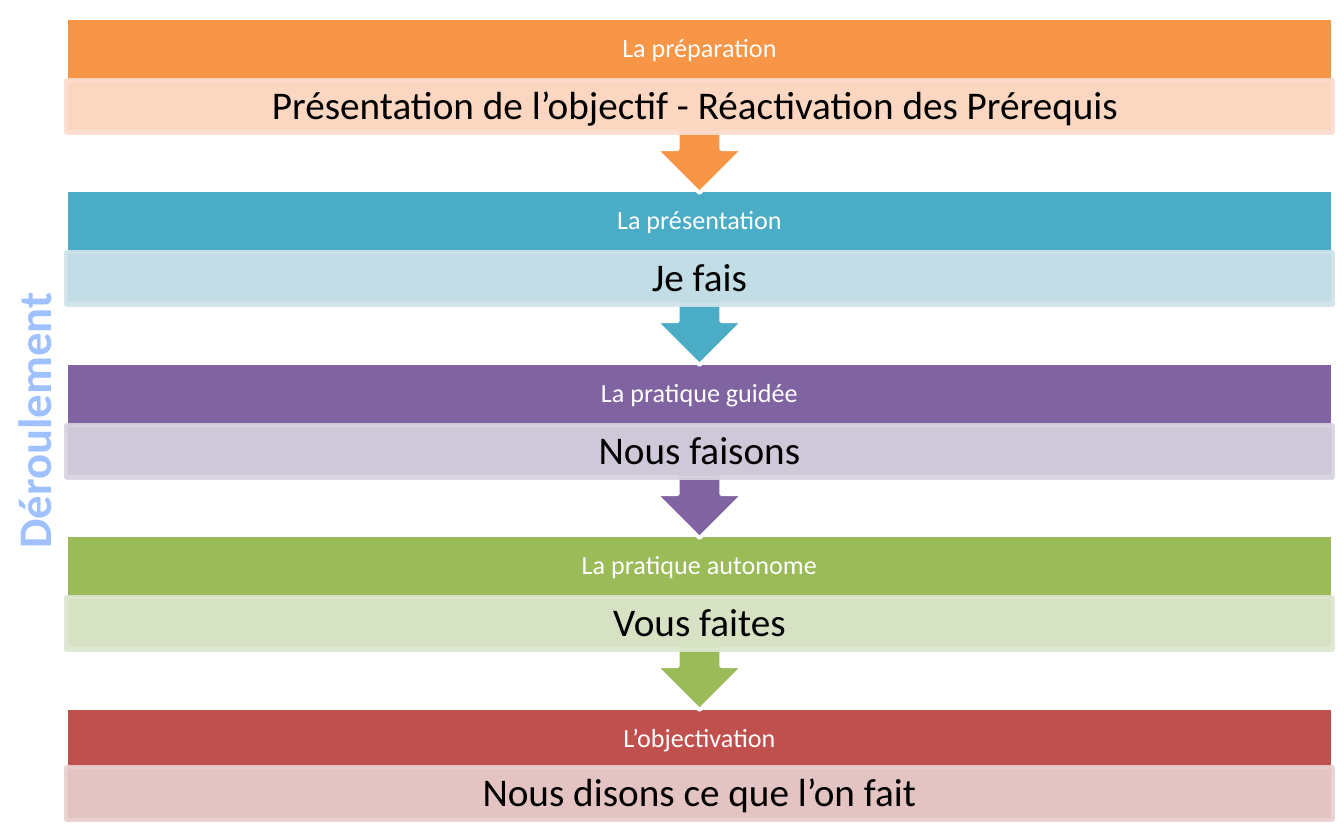
from dataclasses import dataclass

from lxml import etree
from pptx import Presentation
from pptx.dml.color import RGBColor
from pptx.enum.shapes import MSO_SHAPE
from pptx.enum.text import MSO_ANCHOR, MSO_AUTO_SIZE, PP_ALIGN
from pptx.oxml.ns import qn
from pptx.util import Emu, Pt

RECTANGLE = MSO_SHAPE.RECTANGLE
CALLOUT = MSO_SHAPE.UP_ARROW_CALLOUT
CENTER = PP_ALIGN.CENTER
TOP, MIDDLE = MSO_ANCHOR.TOP, MSO_ANCHOR.MIDDLE
NO_AUTOFIT = MSO_AUTO_SIZE.NONE

WHITE = RGBColor(0xFF, 0xFF, 0xFF)
BLACK = RGBColor(0x00, 0x00, 0x00)
TITLE_BLUE = RGBColor(0xA0, 0xC1, 0xFF)
ORANGE, PEACH = RGBColor(0xF7, 0x96, 0x46), RGBColor(0xFC, 0xDD, 0xCF)
TEAL, PALE_TEAL = RGBColor(0x4B, 0xAC, 0xC6), RGBColor(0xD0, 0xE3, 0xEA)
PURPLE, LILAC = RGBColor(0x80, 0x64, 0xA2), RGBColor(0xD8, 0xD3, 0xE0)
GREEN, PALE_GREEN = RGBColor(0x9B, 0xBB, 0x59), RGBColor(0xDE, 0xE7, 0xD1)
RED, PINK = RGBColor(0xC0, 0x50, 0x4D), RGBColor(0xE8, 0xD0, 0xD0)

FONT = "Calibri"
EMU_PER_PX = 914400 / 134.4
PAGE_WIDTH, PAGE_HEIGHT = 1344, 840
STEP_LEFT, STEP_WIDTH, FIRST_TOP = 66, 1267, 18
FIVE_STEPS_SPAN = 690  # from the first top to the fifth
CALLOUT_HEIGHT, LAST_HEIGHT = 175, 113
HEADER_HEIGHT, STRIP_HEIGHT = 62, 53
STRIP_OFFSET, LAST_STRIP_OFFSET = 62, 59


@dataclass(frozen=True)
class Step:
    header: str
    detail: str
    color: RGBColor
    tint: RGBColor


STEPS = [
    Step("La préparation", "Présentation de l’objectif - Réactivation des Prérequis ",
         ORANGE, PEACH),
    Step("La présentation", "Je fais", TEAL, PALE_TEAL),
    Step("La pratique guidée", "Nous faisons", PURPLE, LILAC),
    Step("La pratique autonome", "Vous faites", GREEN, PALE_GREEN),
    Step("L’objectivation", "Nous disons ce que l’on fait", RED, PINK),
]


def px(length: int) -> Emu:
    return Emu(round(length * EMU_PER_PX))


def write(box, text: str, *, size: int, color: RGBColor, bold: bool = False,
          anchor=MIDDLE, spacing: float = 0.9, margins: tuple = (0, 0)) -> None:
    """Put one centred line of text in a box; margins are (sides, top and bottom)."""
    frame = box.text_frame
    frame.word_wrap = True
    frame.auto_size = NO_AUTOFIT
    frame.vertical_anchor = anchor
    frame.margin_left = frame.margin_right = px(margins[0])
    frame.margin_top = frame.margin_bottom = px(margins[1])
    para = frame.paragraphs[0]
    para.alignment = CENTER
    para.line_spacing = spacing
    span = para.add_run()
    span.text = text
    span.font.name = FONT
    span.font.size = Pt(size)
    span.font.bold = bold
    span.font.color.rgb = color


def add_block(page, kind, top: int, height: int, fill: RGBColor, line: RGBColor):
    block = page.shapes.add_shape(kind, px(STEP_LEFT), px(top), px(STEP_WIDTH), px(height))
    block.shadow.inherit = False
    block.fill.solid()
    block.fill.fore_color.rgb = fill
    block.line.color.rgb = line
    block.line.width = Pt(2)
    return block


def set_opacity(block, percent: int) -> None:
    """Apply the opacity to both fill and line."""
    for color in block._element.spPr.iter(qn("a:srgbClr")):
        etree.SubElement(color, qn("a:alpha")).set("val", str(percent * 1000))


def add_step(page, step: Step, top: int, is_last: bool) -> None:
    # Coloured body, with an arrow down to the next step
    if is_last:
        add_block(page, RECTANGLE, top, LAST_HEIGHT, step.color, WHITE)
    else:
        body = add_block(page, CALLOUT, top, CALLOUT_HEIGHT, step.color, WHITE)
        body.rotation = 180

    # Upright header, kept apart from the rotated body
    header = page.shapes.add_textbox(px(STEP_LEFT), px(top), px(STEP_WIDTH), px(HEADER_HEIGHT))
    write(header, step.header, size=14, color=WHITE, margins=(15, 15))

    # Tinted strip with the detail
    offset = LAST_STRIP_OFFSET if is_last else STRIP_OFFSET
    strip = add_block(page, RECTANGLE, top + offset, STRIP_HEIGHT, step.tint, step.tint)
    set_opacity(strip, 90)
    write(strip, step.detail, size=21, color=BLACK, margins=(21, 4))


def add_title(page) -> None:
    title = page.shapes.title
    title.left, title.top = px(-387), px(387)
    title.width, title.height = px(PAGE_HEIGHT), px(67)
    title.rotation = 270
    write(title, "Déroulement", size=25, color=TITLE_BLUE, bold=True,
          anchor=TOP, spacing=1.0, margins=(11, 5))


def main() -> None:
    deck = Presentation()
    deck.slide_width, deck.slide_height = px(PAGE_WIDTH), px(PAGE_HEIGHT)
    page = deck.slides.add_slide(deck.slide_layouts[5])
    add_title(page)

    # Last step first, so that each arrow lies over the step below it
    last = len(STEPS) - 1
    for index in range(last, -1, -1):
        top = FIRST_TOP + index * FIVE_STEPS_SPAN // last
        add_step(page, STEPS[index], top, index == last)

    deck.save("out.pptx")


if __name__ == "__main__":
    main()
